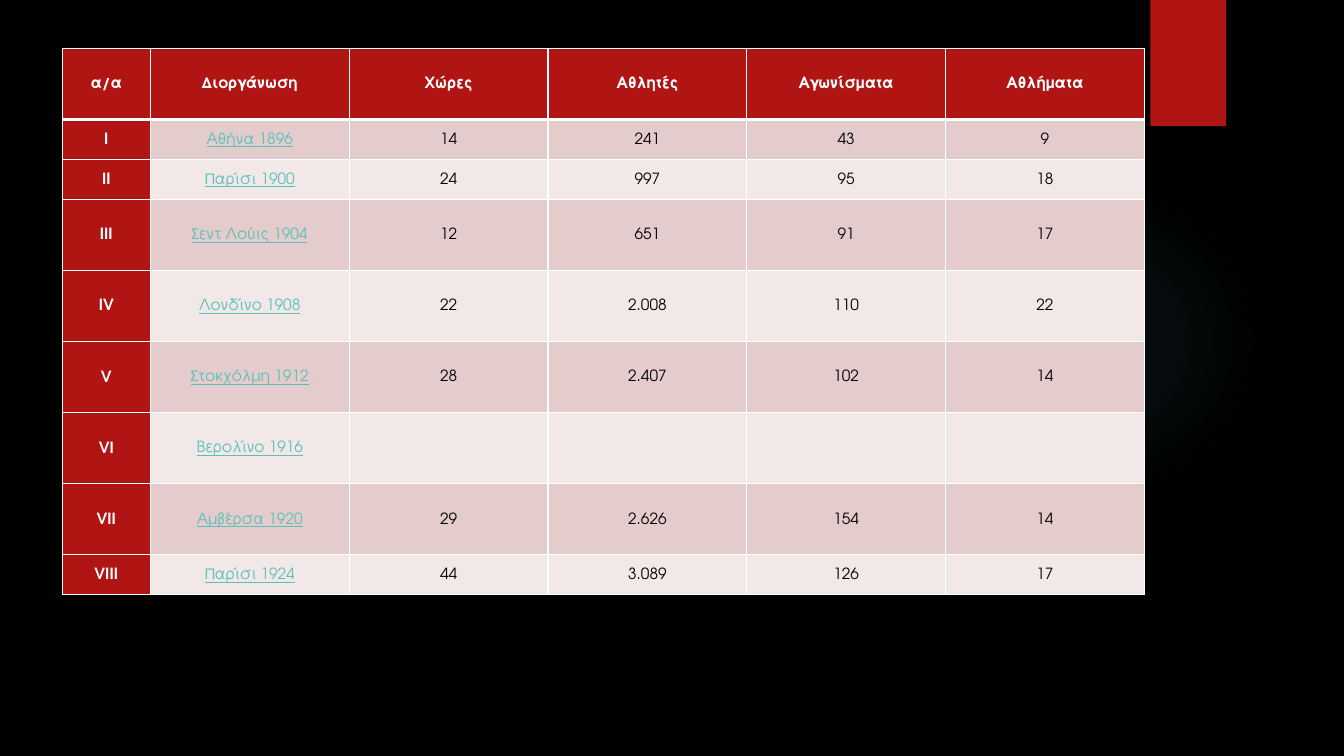
from dataclasses import dataclass

from pptx import Presentation
from pptx.dml.color import RGBColor
from pptx.enum.shapes import MSO_SHAPE as Preset
from pptx.enum.text import MSO_ANCHOR as Anchor, PP_ALIGN as Align
from pptx.oxml import parse_xml
from pptx.oxml.ns import nsdecls, qn
from pptx.util import Cm, Pt

COLORS = {
    "background": "000000",
    "red": "B01513",
    "glow": "50B9C1",
    "white": "FFFFFF",
    "black": "000000",
    "link": "58C1BA",
    "dark_band": "E4CCCC",
    "light_band": "F2E8E7",
}
FONT = "TeX Gyre Adventor"
TALL, SHORT = 1.79, 1.01
COLUMN_WIDTHS = [2.22] + [5.01] * 5
GLOW_STOPS = [(0, 7), (36, 6), (69, 0)]
HEADINGS = ("α/α", "Διοργάνωση", "Χώρες", "Αθλητές", "Αγωνίσματα", "Αθλήματα")


@dataclass
class Games:
    number: str
    host: str
    figures: tuple[str, ...] = ("", "", "", "")
    height: float = TALL


GAMES = [
    Games("Ι", "Αθήνα 1896", ("14", "241", "43", "9"), SHORT),
    Games("ΙΙ", "Παρίσι 1900", ("24", "997", "95", "18"), SHORT),
    Games("ΙΙΙ", "Σεντ Λούις 1904", ("12", "651", "91", "17")),
    Games("ΙV", "Λονδίνο 1908", ("22", "2.008", "110", "22")),
    Games("V", "Στοκχόλμη 1912", ("28", "2.407", "102", "14")),
    Games("VΙ", "Βερολίνο 1916"),
    Games("VIΙ", "Αμβέρσα 1920", ("29", "2.626", "154", "14")),
    Games("VIIΙ", "Παρίσι 1924", ("44", "3.089", "126", "17"), SHORT),
]


def rgb(name: str) -> RGBColor:
    return RGBColor.from_string(COLORS[name])


def add_plain_shape(slide, preset, left: float, top: float, width: float, height: float):
    shape = slide.shapes.add_shape(preset, Cm(left), Cm(top), Cm(width), Cm(height))
    shape.shadow.inherit = False
    shape.line.fill.background()
    return shape


def add_glow(slide) -> None:
    shape = add_plain_shape(slide, Preset.OVAL, 23.9, 4.65, 7.82, 7.82)
    shape.fill.background()
    stops = "".join(
        f'<a:gs pos="{position * 1000}"><a:srgbClr val="{COLORS["glow"]}">'
        f'<a:alpha val="{opacity * 1000}"/></a:srgbClr></a:gs>'
        for position, opacity in GLOW_STOPS
    )
    gradient = parse_xml(
        f'<a:gradFill {nsdecls("a")} rotWithShape="1"><a:gsLst>{stops}</a:gsLst>'
        '<a:path path="circle"><a:fillToRect l="50000" t="50000" r="50000" b="50000"/>'
        "</a:path></a:gradFill>"
    )
    properties = shape.element.spPr
    properties.replace(properties.find(qn("a:noFill")), gradient)


def add_red_tab(slide) -> None:
    shape = add_plain_shape(slide, Preset.RECTANGLE, 28.99, 0, 1.91, 3.18)
    shape.fill.solid()
    shape.fill.fore_color.rgb = rgb("red")
    shape.element.spPr.find(qn("a:effectLst")).append(parse_xml(
        f'<a:outerShdw {nsdecls("a")} blurRad="{Pt(3)}" dist="{Pt(2)}" dir="5400000" '
        f'rotWithShape="0"><a:srgbClr val="{COLORS["black"]}"><a:alpha val="45000"/>'
        "</a:srgbClr></a:outerShdw>"
    ))


def set_borders(cell, top: float = 1, bottom: float = 1) -> None:
    """Draw white borders, with widths in points."""
    properties = cell._tc.get_or_add_tcPr()
    sides = {"lnL": 1, "lnR": 1, "lnT": top, "lnB": bottom}
    for index, (side, width) in enumerate(sides.items()):
        properties.insert(index, parse_xml(
            f'<a:{side} {nsdecls("a")} w="{Pt(width)}"><a:solidFill>'
            f'<a:srgbClr val="{COLORS["white"]}"/></a:solidFill></a:{side}>'
        ))


def write(cell, text: str, *, color: str, bold: bool = False, underline: bool = False) -> None:
    cell.vertical_anchor = Anchor.MIDDLE
    cell.margin_left = cell.margin_right = cell.margin_top = cell.margin_bottom = Cm(0.08)
    paragraph = cell.text_frame.paragraphs[0]
    paragraph.alignment = Align.CENTER
    paragraph.line_spacing = 1.07
    paragraph.space_after = Pt(8)
    run = paragraph.add_run()
    run.text = text
    font = run.font
    font.name, font.size = FONT, Pt(11)
    font.bold, font.underline = bold, underline
    font.color.rgb = rgb(color)


def fill_cell(cell, text: str, row: int, column: int) -> None:
    is_heading = row == 0 or column == 0
    band = "dark_band" if row % 2 else "light_band"
    cell.fill.solid()
    cell.fill.fore_color.rgb = rgb("red" if is_heading else band)
    set_borders(cell, top=3 if row == 1 else 1, bottom=3 if row == 0 else 1)
    if not text:
        return
    if is_heading:
        write(cell, text, color="white", bold=True)
    elif column == 1:
        write(cell, text, color="link", underline=True)
    else:
        write(cell, text, color="black")


def add_games_table(slide) -> None:
    rows = [HEADINGS] + [(games.number, games.host, *games.figures) for games in GAMES]
    heights = [TALL] + [games.height for games in GAMES]
    table = slide.shapes.add_table(
        len(rows), len(HEADINGS), Cm(1.57), Cm(1.22),
        Cm(sum(COLUMN_WIDTHS)), Cm(sum(heights)),
    ).table
    for column, width in zip(table.columns, COLUMN_WIDTHS):
        column.width = Cm(width)
    for row, height in zip(table.rows, heights):
        row.height = Cm(height)
    for row_index, texts in enumerate(rows):
        for column_index, text in enumerate(texts):
            fill_cell(table.cell(row_index, column_index), text, row_index, column_index)


def main() -> None:
    presentation = Presentation()
    presentation.slide_width, presentation.slide_height = Cm(33.87), Cm(19.05)
    slide = presentation.slides.add_slide(presentation.slide_layouts[6])
    slide.background.fill.solid()
    slide.background.fill.fore_color.rgb = rgb("background")
    add_glow(slide)
    add_red_tab(slide)
    add_games_table(slide)
    presentation.save("out.pptx")


if __name__ == "__main__":
    main()
